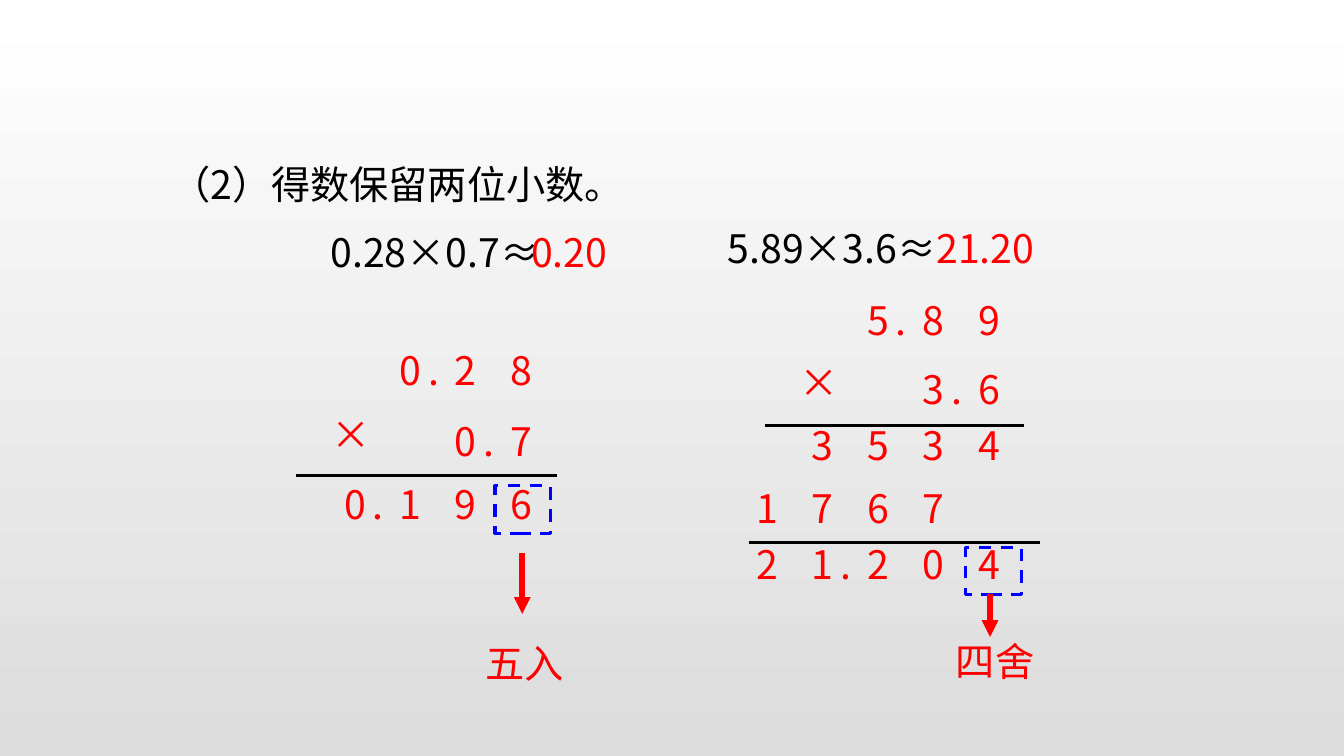
from lxml import etree
from pptx import Presentation
from pptx import util as u
from pptx.dml.color import RGBColor
from pptx.enum import dml, shapes, text
from pptx.oxml import ns

BLACK = RGBColor(0, 0, 0)
RED = RGBColor(0xFF, 0, 0)
BLUE = RGBColor(0, 0, 0xFF)
WHITE = RGBColor(0xFF, 0xFF, 0xFF)
GREY = RGBColor(0xDC, 0xDC, 0xDC)

FONT = "Noto Sans CJK SC"
TEXT_H = 0.57
DIGIT_W, DIGIT_STEP, POINT_STEP = 0.54, 0.55, 0.23
CENTER = text.PP_ALIGN.CENTER
LEFT = text.PP_ALIGN.LEFT


def inches(*lengths):
    return [u.Inches(n) for n in lengths]


def write(sp, words, color, align=LEFT):
    tf = sp.text_frame
    tf.text = words
    tf.word_wrap = True
    tf.vertical_anchor = text.MSO_ANCHOR.TOP
    p = tf.paragraphs[0]
    p.alignment = align
    font = p.runs[0].font
    font.size, font.name = u.Pt(28), FONT
    font.color.rgb = color
    r_pr = p.runs[0]._r.get_or_add_rPr()
    etree.SubElement(r_pr, ns.qn("a:ea"), typeface=FONT)


def add_text(s, words, left, top, width, color=RED, align=CENTER):
    sp = s.shapes.add_textbox(*inches(left, top, width, TEXT_H))
    write(sp, words, color, align)


def add_equation(s, question, answer, left, answer_left, top):
    add_text(s, question, left, top, 2.34, BLACK, LEFT)
    add_text(s, answer, answer_left, top, 1.3, RED, LEFT)


def add_line(s, x1, y1, x2, y2, color, width, arrow=False):
    line = s.shapes.add_connector(shapes.MSO_CONNECTOR.STRAIGHT, *inches(x1, y1, x2, y2))
    line.line.color.rgb = color
    line.line.width = u.Pt(width)
    if arrow:
        etree.SubElement(line.line._get_or_add_ln(), ns.qn("a:tailEnd"), type="triangle")
    etree.SubElement(line._element.spPr, ns.qn("a:effectLst"))


def add_number(s, number, units_left, top, shift=0):
    """Lay digits on the column grid, ending `shift` columns left of the last one."""
    digits = len(number.replace(".", ""))
    left = units_left - (digits - 1 + shift) * DIGIT_STEP
    for char in number:
        if char == ".":
            add_text(s, char, left - DIGIT_STEP + POINT_STEP, top, DIGIT_W)
        else:
            add_text(s, char, left, top, DIGIT_W)
            left += DIGIT_STEP


def add_multiplication(s, units_left, rows, rules):
    """Draw a column multiplication from (number, top, shift) rows and (x1, x2, y) rules."""
    for number, top, shift in rows:
        add_number(s, number, units_left, top, shift)
    add_text(s, "×", units_left - 1.71, rows[1][1] - 0.07, DIGIT_W)
    for x1, x2, y in rules:
        add_line(s, x1, y, x2, y, BLACK, 2)


def add_rounding(s, label, box_left, box_top, arrow_x, arrow_top, arrow_end, label_top):
    """Frame the dropped digit and point to the rounding rule."""
    box = s.shapes.add_shape(shapes.MSO_SHAPE.RECTANGLE, *inches(box_left, box_top, 0.55, 0.47))
    box.shadow.inherit = False
    box.fill.background()
    box.line.color.rgb = BLUE
    box.line.width = u.Pt(2.25)
    box.line.dash_style = dml.MSO_LINE.DASH
    add_text(s, label, box_left - 0.96, label_top, 2.5)
    add_line(s, arrow_x, arrow_top, arrow_x, arrow_end, RED, 4, arrow=True)


def set_background(s):
    fill = s.background.fill
    fill.gradient()
    fill.gradient_angle = 270
    for stop, color, position in zip(fill.gradient_stops, (WHITE, GREY), (0, 1)):
        stop.color.rgb = color
        stop.position = position


def add_title(s, words):
    title = s.shapes.title
    title.left, title.top, title.width, title.height = inches(1.6, 1.54, 9.22, TEXT_H)
    write(title, words, BLACK)
    title.text_frame.auto_size = text.MSO_AUTO_SIZE.NONE


def main():
    prs = Presentation()
    prs.slide_width, prs.slide_height = inches(13.33, 7.5)
    s = prs.slides.add_slide(prs.slide_layouts[5])
    set_background(s)
    add_title(s, "（2）得数保留两位小数。")

    add_equation(s, "0.28×0.7≈", "0.20", 3.18, 5.17, 2.22)
    add_multiplication(
        s, 4.9,
        [("0.28", 3.39, 0), ("0.7", 4.09, 0), ("0.196", 4.72, 0)],
        [(2.94, 5.52, 4.72)])
    add_rounding(s, "五入", 4.91, 4.82, 5.18, 5.49, 6.09, 6.29)

    add_equation(s, "5.89×3.6≈", "21.20", 7.12, 9.19, 2.18)
    add_multiplication(
        s, 9.54,
        [("5.89", 2.89, 0), ("3.6", 3.58, 0), ("3534", 4.13, 0),
         ("1767", 4.76, 1), ("21.204", 5.31, 0)],
        [(7.59, 10.16, 4.22), (7.43, 10.32, 5.38)])
    add_rounding(s, "四舍", 9.58, 5.43, 9.82, 5.89, 6.32, 6.27)

    prs.save("out.pptx")


if __name__ == "__main__":
    main()
